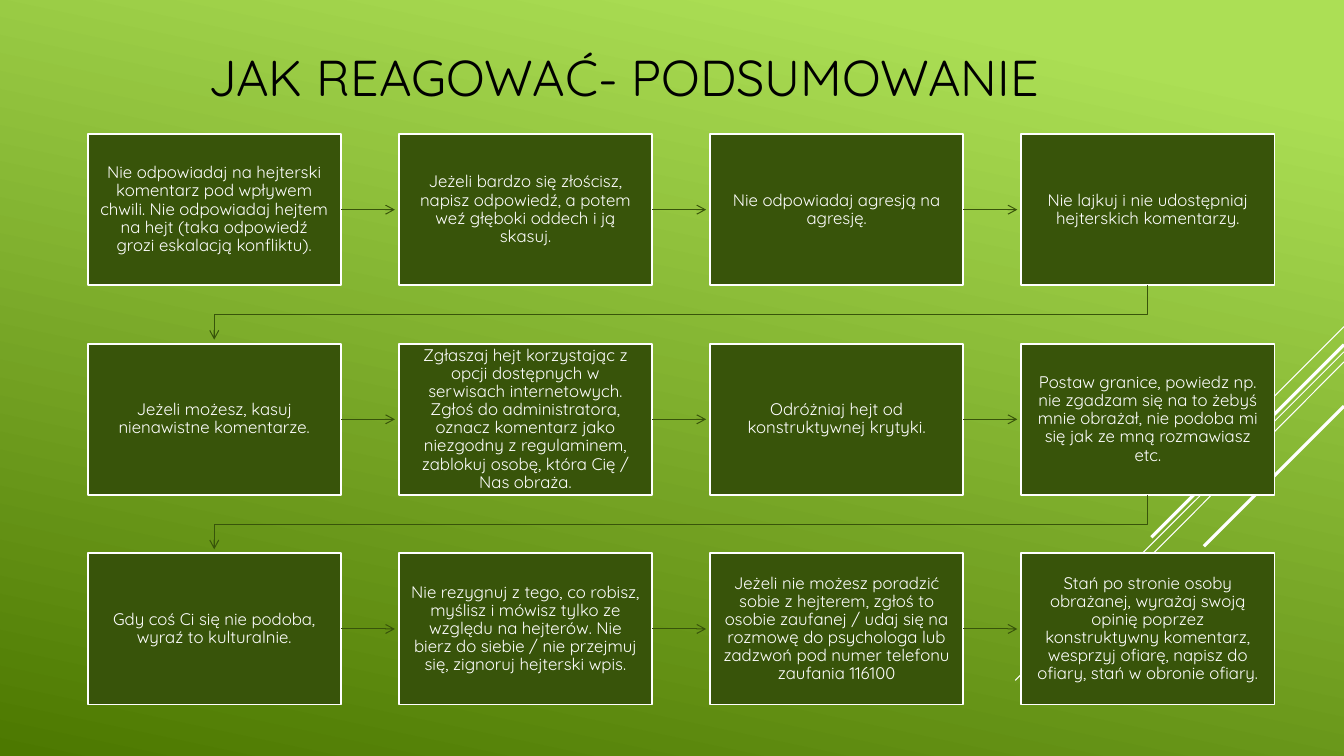
"""Builds a slide with twelve steps for reacting to online hate."""
from typing import NamedTuple

from lxml.etree import SubElement
from pptx import Presentation
from pptx.dml.color import RGBColor
from pptx.enum.shapes import MSO_CONNECTOR, MSO_SHAPE
from pptx.enum.text import MSO_ANCHOR, PP_ALIGN
from pptx.oxml.ns import qn
from pptx.util import Inches, Pt

COLORS = {"light": "ACDF55", "deep": "4C7800", "box": "38540A",
          "white": "FFFFFF", "black": "000000"}
FONT = "Quicksand"
COLS = 4
LEFT, TOP = 0.87, 1.33
BOX_W, BOX_H = 2.51, 1.5
PITCH_X, PITCH_Y = 9.26 / 3, 2.08
ARROW_GAP = 0.04


class Stripe(NamedTuple):
    y1: float
    x2: float
    y2: float
    width: float


class Step(NamedTuple):
    index: int
    text: str

    @property
    def x(self) -> float:
        return LEFT + self.index % COLS * PITCH_X

    @property
    def y(self) -> float:
        return TOP + self.index // COLS * PITCH_Y


STRIPES = [
    Stripe(3.24, 12.33, 4.24, 0.75),
    Stripe(3.49, 10.07, 6.75, 0.75),
    Stripe(3.59, 11.26, 5.67, 0.75),
    Stripe(3.42, 11.42, 5.33, 2.25),
    Stripe(4.03, 11.94, 5.42, 2.25),
]

TEXTS = [
    "Nie odpowiadaj na hejterski komentarz pod wpływem chwili. Nie odpowiadaj hejtem na hejt "
    "(taka odpowiedź grozi eskalacją konfliktu).",
    "Jeżeli bardzo się złościsz, napisz odpowiedź, a potem weź głęboki oddech i ją skasuj.",
    "Nie odpowiadaj agresją na agresję.",
    "Nie lajkuj i nie udostępniaj hejterskich komentarzy.",
    "Jeżeli możesz, kasuj nienawistne komentarze.",
    "Zgłaszaj hejt korzystając z opcji dostępnych w serwisach internetowych. Zgłoś do "
    "administratora, oznacz komentarz jako niezgodny z regulaminem, zablokuj osobę, która Cię / "
    "Nas obraża.",
    "Odróżniaj hejt od konstruktywnej krytyki.",
    "Postaw granice, powiedz np. nie zgadzam się na to żebyś mnie obrażał, nie podoba mi się "
    "jak ze mną rozmawiasz etc.",
    "Gdy coś Ci się nie podoba, wyraź to kulturalnie.",
    "Nie rezygnuj z tego, co robisz, myślisz i mówisz tylko ze względu na hejterów. Nie bierz "
    "do siebie / nie przejmuj się, zignoruj hejterski wpis.",
    "Jeżeli nie możesz poradzić sobie z hejterem, zgłoś to osobie zaufanej / udaj się na "
    "rozmowę do psychologa lub zadzwoń pod numer telefonu zaufania 116100",
    "Stań po stronie osoby obrażanej, wyrażaj swoją opinię poprzez konstruktywny komentarz, "
    "wesprzyj ofiarę, napisz do ofiary, stań w obronie ofiary.",
]


def rgb(name: str) -> RGBColor:
    return RGBColor.from_string(COLORS[name])


def write(sp, text: str, *, size: float, color: str, spacing: float = 1.0,
          inset_x: float = 0.1, inset_y: float = 0.05) -> None:
    tf = sp.text_frame
    tf.word_wrap = True
    tf.vertical_anchor = MSO_ANCHOR.MIDDLE
    tf.margin_left = tf.margin_right = Inches(inset_x)
    tf.margin_top = tf.margin_bottom = Inches(inset_y)
    p = tf.paragraphs[0]
    p.alignment = PP_ALIGN.CENTER
    p.line_spacing = spacing
    r = p.add_run()
    r.text = text
    r.font.size = Pt(size)
    r.font.name = FONT
    r.font.color.rgb = rgb(color)


def set_line(sp, color: str, width: float, arrow: bool = False) -> None:
    sp.line.color.rgb = rgb(color)
    sp.line.width = Pt(width)
    if arrow:
        SubElement(sp.line._get_or_add_ln(), qn("a:tailEnd"), type="arrow")


def add_line(s, x1: float, y1: float, x2: float, y2: float, color: str,
             width: float, arrow: bool = False):
    cn = s.shapes.add_connector(MSO_CONNECTOR.STRAIGHT, Inches(x1), Inches(y1),
                                Inches(x2), Inches(y2))
    set_line(cn, color, width, arrow)
    SubElement(cn._element.spPr, qn("a:effectLst"))
    return cn


def add_box(s, step: Step):
    sp = s.shapes.add_shape(MSO_SHAPE.RECTANGLE, Inches(step.x), Inches(step.y),
                            Inches(BOX_W), Inches(BOX_H))
    sp.shadow.inherit = False
    sp.fill.solid()
    sp.fill.fore_color.rgb = rgb("box")
    set_line(sp, "white", 1.25)
    write(sp, step.text, size=12, color="white", spacing=0.9, inset_x=0.12, inset_y=0.13)
    return sp


def add_row_break(s, start: Step, end: Step) -> None:
    x1, x2 = start.x + BOX_W / 2, end.x + BOX_W / 2
    y1, y2 = start.y + BOX_H, end.y - ARROW_GAP
    turn = (start.y + BOX_H + end.y) / 2
    fb = s.shapes.build_freeform(Inches(x1), Inches(y1))
    fb.add_line_segments([(Inches(x), Inches(y)) for x, y in
                          [(x1, turn), (x2, turn), (x2, y2)]], close=False)
    sp = fb.convert_to_shape()
    sp.shadow.inherit = False
    sp.fill.background()
    set_line(sp, "box", 0.75, arrow=True)


def add_arrow(s, start: Step, end: Step, box) -> None:
    if end.index % COLS == 0:
        add_row_break(s, start, end)
        return
    y = start.y + BOX_H / 2
    cn = add_line(s, start.x + BOX_W, y, end.x - ARROW_GAP, y, "box", 0.75, arrow=True)
    cn.begin_connect(box, 3)


def main() -> None:
    prs = Presentation()
    prs.slide_width, prs.slide_height = Inches(13.33), Inches(7.5)
    s = prs.slides.add_slide(prs.slide_layouts[6])

    fill = s.background.fill
    fill.gradient()
    fill.gradient_angle = 360 - 102
    for stop, color, position in zip(fill.gradient_stops, ("light", "deep"), (0.1, 1.0)):
        stop.color.rgb = rgb(color)
        stop.position = position

    for stripe in STRIPES:
        add_line(s, 13.33, stripe.y1, stripe.x2, stripe.y2, "white", stripe.width)

    title = s.shapes.add_textbox(Inches(1.52), Inches(-0.07), Inches(9.33), Inches(1.65))
    write(title, "JAK REAGOWAĆ- PODSUMOWANIE", size=36, color="black")

    steps = [Step(i, text) for i, text in enumerate(TEXTS)]
    boxes = [add_box(s, step) for step in steps]
    for start, end, box in zip(steps, steps[1:], boxes):
        add_arrow(s, start, end, box)

    prs.save("out.pptx")


if __name__ == "__main__":
    main()
